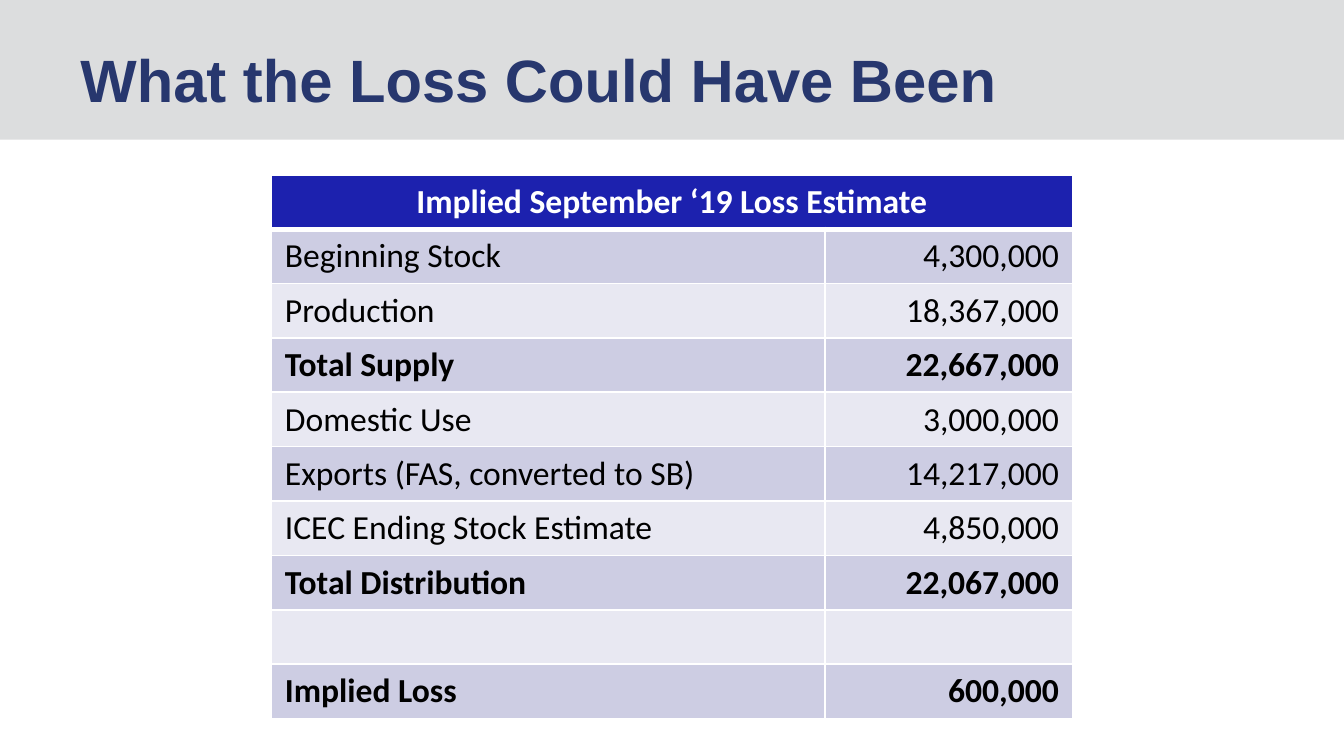
from dataclasses import dataclass

from lxml import etree
from pptx import Presentation
from pptx.dml.color import RGBColor
from pptx.enum import shapes, text
from pptx.oxml import ns
from pptx.util import Inches, Pt


@dataclass(frozen=True)
class Theme:
    banner: str = "DCDDDE"
    title: str = "27376E"
    header: str = "1C21AE"
    bands: tuple[str, str] = ("CDCDE3", "E8E8F2")
    white: str = "FFFFFF"
    black: str = "000000"
    title_font: str = "Arial"
    table_font: str = "Calibri"
    title_size: int = 32
    table_size: int = 18


@dataclass(frozen=True)
class Entry:
    label: str = ""
    amount: str = ""
    bold: bool = False


THEME = Theme()
ENTRIES = [
    Entry("Beginning Stock", "4,300,000"),
    Entry("Production", "18,367,000"),
    Entry("Total Supply", "22,667,000", bold=True),
    Entry("Domestic Use", "3,000,000"),
    Entry("Exports (FAS, converted to SB)", "14,217,000"),
    Entry("ICEC Ending Stock Estimate", "4,850,000"),
    Entry("Total Distribution", "22,067,000", bold=True),
    Entry(),
    Entry("Implied Loss", "600,000", bold=True),
]
COLUMN_WIDTHS = (4.12, 1.84)
TABLE_HEIGHT = 4.05


def write(paragraph, content: str, color: str, alignment=text.PP_ALIGN.LEFT, **font_values) -> None:
    paragraph.alignment = alignment
    run = paragraph.add_run()
    run.text = content
    for name, value in font_values.items():
        setattr(run.font, name, value)
    run.font.color.rgb = RGBColor.from_string(color)


def add_borders(cell, bottom_width: int) -> None:
    """Draw white lines round a cell; call before setting the cell's fill."""
    properties = cell._tc.get_or_add_tcPr()
    for side, width in {"L": 1, "R": 1, "T": 1, "B": bottom_width}.items():
        line = etree.SubElement(properties, ns.qn(f"a:ln{side}"), w=str(Pt(width)))
        fill = etree.SubElement(line, ns.qn("a:solidFill"))
        etree.SubElement(fill, ns.qn("a:srgbClr"), val=THEME.white)


def style_cell(cell, color: str, bottom_width: int = 1) -> None:
    add_borders(cell, bottom_width)
    cell.fill.solid()
    cell.fill.fore_color.rgb = RGBColor.from_string(color)


def add_banner(slide) -> None:
    banner = slide.shapes.add_shape(
        shapes.MSO_SHAPE.RECTANGLE, 0, 0, Inches(10), Inches(1.04))
    banner.shadow.inherit = False
    banner.fill.solid()
    banner.fill.fore_color.rgb = RGBColor.from_string(THEME.banner)
    banner.line.fill.background()


def add_title(slide, title: str) -> None:
    frame = slide.shapes.add_textbox(
        Inches(0.5), Inches(0.23), Inches(8.39), Inches(0.71)).text_frame
    frame.word_wrap = True
    frame.vertical_anchor = text.MSO_ANCHOR.MIDDLE
    write(frame.paragraphs[0], title, THEME.title,
          name=THEME.title_font, size=Pt(THEME.title_size), bold=True)


def add_loss_table(slide, heading: str, entries: list[Entry]) -> None:
    row_count = len(entries) + 1
    table = slide.shapes.add_table(
        row_count, len(COLUMN_WIDTHS), Inches(2.02), Inches(1.3),
        Inches(sum(COLUMN_WIDTHS)), Inches(TABLE_HEIGHT)).table
    for column, width in zip(table.columns, COLUMN_WIDTHS):
        column.width = Inches(width)

    font = {"name": THEME.table_font, "size": Pt(THEME.table_size)}
    for cell in table.rows[0].cells:
        style_cell(cell, THEME.header, bottom_width=3)
    header = table.cell(0, 0)
    header.merge(table.cell(0, 1))
    write(header.text_frame.paragraphs[0], heading, THEME.white,
          text.PP_ALIGN.CENTER, bold=True, **font)

    alignments = (text.PP_ALIGN.LEFT, text.PP_ALIGN.RIGHT)
    for index, entry in enumerate(entries):
        for column, content in enumerate((entry.label, entry.amount)):
            cell = table.cell(index + 1, column)
            style_cell(cell, THEME.bands[index % 2])
            if content:
                write(cell.text_frame.paragraphs[0], content, THEME.black,
                      alignments[column], bold=entry.bold, **font)


def main() -> None:
    presentation = Presentation()
    presentation.slide_width = Inches(10)
    presentation.slide_height = Inches(10) * 9 // 16
    slide = presentation.slides.add_slide(presentation.slide_layouts[6])
    add_banner(slide)
    add_title(slide, "What the Loss Could Have Been")
    add_loss_table(slide, "Implied September ‘19 Loss Estimate", ENTRIES)
    presentation.save("out.pptx")


if __name__ == "__main__":
    main()
